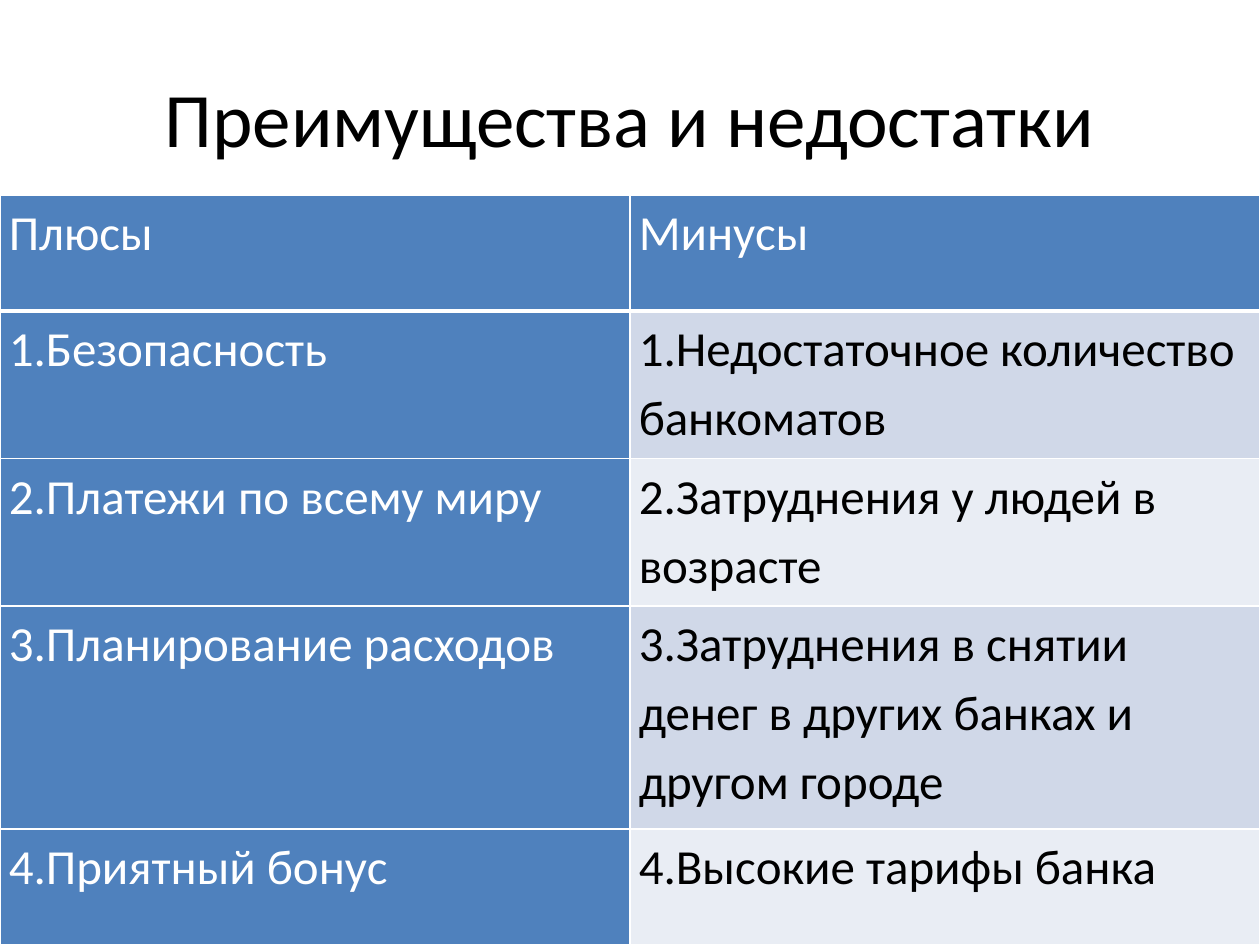
from lxml import etree
from pptx import Presentation
from pptx.dml.color import RGBColor
from pptx.enum.text import MSO_ANCHOR, PP_ALIGN
from pptx.oxml.ns import qn
from pptx.util import Inches, Pt

CENTER = PP_ALIGN.CENTER
MIDDLE = MSO_ANCHOR.MIDDLE
BLANK_LAYOUT = 6
WIDTH, HEIGHT = 10, 7.5
COLORS = {"blue": "4F81BD", "band_dark": "D0D8E8", "band_light": "E9EDF4",
          "white": "FFFFFF", "black": "000000"}
TITLE = "Преимущества и недостатки"
PROS_AND_CONS = [
    ("Плюсы", "Минусы"),
    ("1.Безопасность", "1.Недостаточное количество банкоматов"),
    ("2.Платежи по всему миру", "2.Затруднения у людей в возрасте"),
    ("3.Планирование расходов",
     "3.Затруднения в снятии денег в других банках и другом городе"),
    ("4.Приятный бонус", "4.Высокие тарифы банка"),
]
ROW_HEIGHTS = [0.92, 1.17, 1.17, 1.77, 0.92]
CELL_MARGINS = {"margin_left": Inches(0.07), "margin_right": Inches(0.07),
                "margin_top": 0, "margin_bottom": 0}


def apply(target, formats):
    for name, value in formats.items():
        setattr(target, name, value)


def write(paragraph, text, size, color):
    run = paragraph.add_run()
    run.text = text
    apply(run.font, {"name": "Calibri", "size": Pt(size), "bold": False})
    run.font.color.rgb = RGBColor.from_string(COLORS[color])


def draw_borders(cell, widths):
    """Give the cell white edges; widths maps L, R, T, B to points."""
    properties = cell._tc.get_or_add_tcPr()
    for position, (side, width) in enumerate(widths.items()):
        edge = etree.Element(qn(f"a:ln{side}"), w=str(Pt(width)))
        fill = etree.SubElement(edge, qn("a:solidFill"))
        etree.SubElement(fill, qn("a:srgbClr"), val=COLORS["white"])
        properties.insert(position, edge)


def add_title(slide, box):
    frame = slide.shapes.add_textbox(*map(Inches, box)).text_frame
    apply(frame, {"word_wrap": True, "vertical_anchor": MIDDLE})
    heading = frame.paragraphs[0]
    heading.alignment = CENTER
    write(heading, TITLE, 44, "black")


def add_comparison(slide, box):
    row_count, column_count = len(PROS_AND_CONS), len(PROS_AND_CONS[0])
    table = slide.shapes.add_table(
        row_count, column_count, *map(Inches, box)).table
    apply(table, {"first_row": True, "first_col": True, "horz_banding": True})
    for column in table.columns:
        column.width = Inches(box[2] / column_count)
    for r, texts in enumerate(PROS_AND_CONS):
        table.rows[r].height = Inches(box[3] * ROW_HEIGHTS[r] / sum(ROW_HEIGHTS))
        for c, text in enumerate(texts):
            cell = table.cell(r, c)
            is_heading = r == 0 or c == 0
            band = "band_dark" if r % 2 else "band_light"
            apply(cell, CELL_MARGINS)
            cell.fill.solid()
            cell.fill.fore_color.rgb = RGBColor.from_string(
                COLORS["blue" if is_heading else band])
            draw_borders(cell, {"L": 1, "R": 1, "T": 1, "B": 1 if r else 3})
            entry = cell.text_frame.paragraphs[0]
            entry.line_spacing = 1.15
            write(entry, text, 28, "white" if is_heading else "black")


def main():
    presentation = Presentation()
    apply(presentation, {"slide_width": Inches(WIDTH),
                         "slide_height": Inches(HEIGHT)})
    slide = presentation.slides.add_slide(
        presentation.slide_layouts[BLANK_LAYOUT])
    table_top = HEIGHT - sum(ROW_HEIGHTS)
    add_title(slide, (0.05 * WIDTH, 0.04 * HEIGHT,
                      0.9 * WIDTH, table_top - 0.04 * HEIGHT))
    add_comparison(slide, (0, table_top, WIDTH, HEIGHT - table_top))
    presentation.save("out.pptx")


if __name__ == "__main__":
    main()
